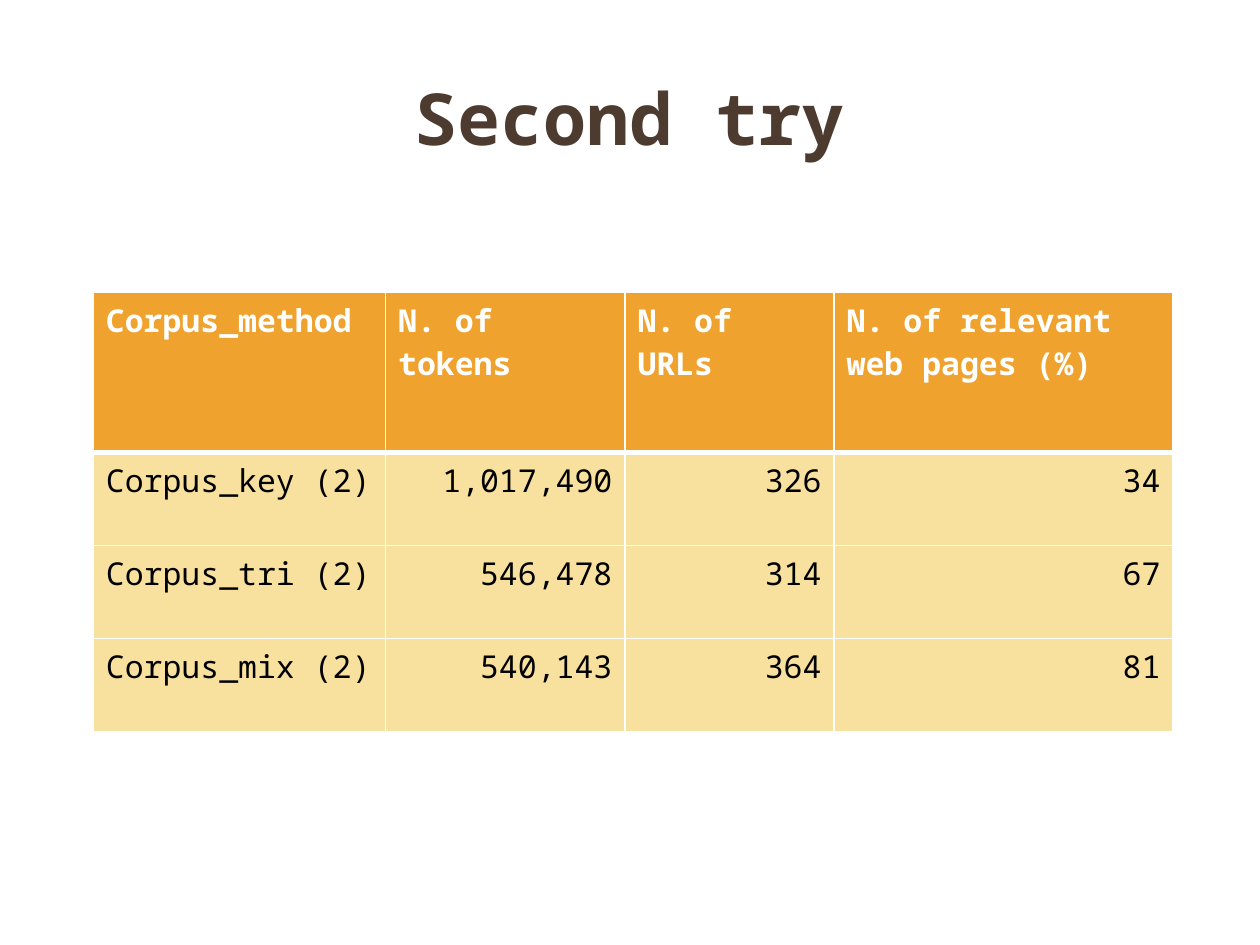
from dataclasses import dataclass

from lxml import etree
from pptx import Presentation
from pptx.dml.color import RGBColor
from pptx.enum import text
from pptx.oxml import ns
from pptx.util import Inches, Pt


@dataclass(frozen=True)
class Theme:
    font: str = "Noto Sans Mono"
    title: str = "4E3B30"
    header: str = "F0A22E"
    body: str = "F8E19F"
    white: str = "FFFFFF"
    black: str = "000000"
    title_size: int = 41
    table_size: int = 18


theme = Theme()


def add_run(p, words, size, color, bold):
    r = p.add_run()
    r.text = words
    r.font.name = theme.font
    r.font.size = Pt(size)
    r.font.bold = bold
    r.font.color.rgb = RGBColor.from_string(color)


def set_borders(cell, widths):
    """Draw white cell borders; widths maps the sides L, R, T, B to points."""
    tc_pr = cell._tc.get_or_add_tcPr()
    for i, side in enumerate("LRTB"):
        ln = etree.Element(ns.qn(f"a:ln{side}"), w=str(Pt(widths[side])))
        fill = etree.SubElement(ln, ns.qn("a:solidFill"))
        etree.SubElement(fill, ns.qn("a:srgbClr"), val=theme.white)
        tc_pr.insert(i, ln)  # borders come before the fill


prs = Presentation()
prs.slide_width, prs.slide_height = Inches(10), Inches(7.5)
s = prs.slides.add_slide(prs.slide_layouts[6])

# Title
sp = s.shapes.add_textbox(Inches(0.5), Inches(0.3), Inches(9), Inches(1.25))
tf = sp.text_frame
tf.word_wrap = True
tf.vertical_anchor = text.MSO_ANCHOR.MIDDLE
p = tf.paragraphs[0]
p.alignment = text.PP_ALIGN.CENTER
add_run(p, "Second try", theme.title_size, theme.title, True)

# Corpus table
rows = [
    ("Corpus_method", "N. of tokens", "N. of URLs", "N. of relevant web pages (%)"),
    ("Corpus_key (2)", "1,017,490", "326", "34"),
    ("Corpus_tri (2)", "546,478", "314", "67"),
    ("Corpus_mix (2)", "540,143", "364", "81"),
]
col_widths = [2.32, 1.9, 1.66, 2.69]
row_heights = [1.27] + [0.74] * 3

table = s.shapes.add_table(
    len(rows), len(col_widths), Inches(0.74), Inches(2.32),
    Inches(sum(col_widths)), Inches(sum(row_heights)),
).table
for column, width in zip(table.columns, col_widths):
    column.width = Inches(width)
for row, height in zip(table.rows, row_heights):
    row.height = Inches(height)

for i, values in enumerate(rows):
    is_header = i == 0
    for j, value in enumerate(values):
        cell = table.cell(i, j)
        cell.fill.solid()
        cell.fill.fore_color.rgb = RGBColor.from_string(
            theme.header if is_header else theme.body)
        set_borders(cell, {"L": 1, "R": 1, "T": 3 if i == 1 else 1,
                           "B": 3 if is_header else 1})
        p = cell.text_frame.paragraphs[0]
        if not is_header and j > 0:
            p.alignment = text.PP_ALIGN.RIGHT
        add_run(p, value, theme.table_size,
                theme.white if is_header else theme.black, is_header)

prs.save("out.pptx")
